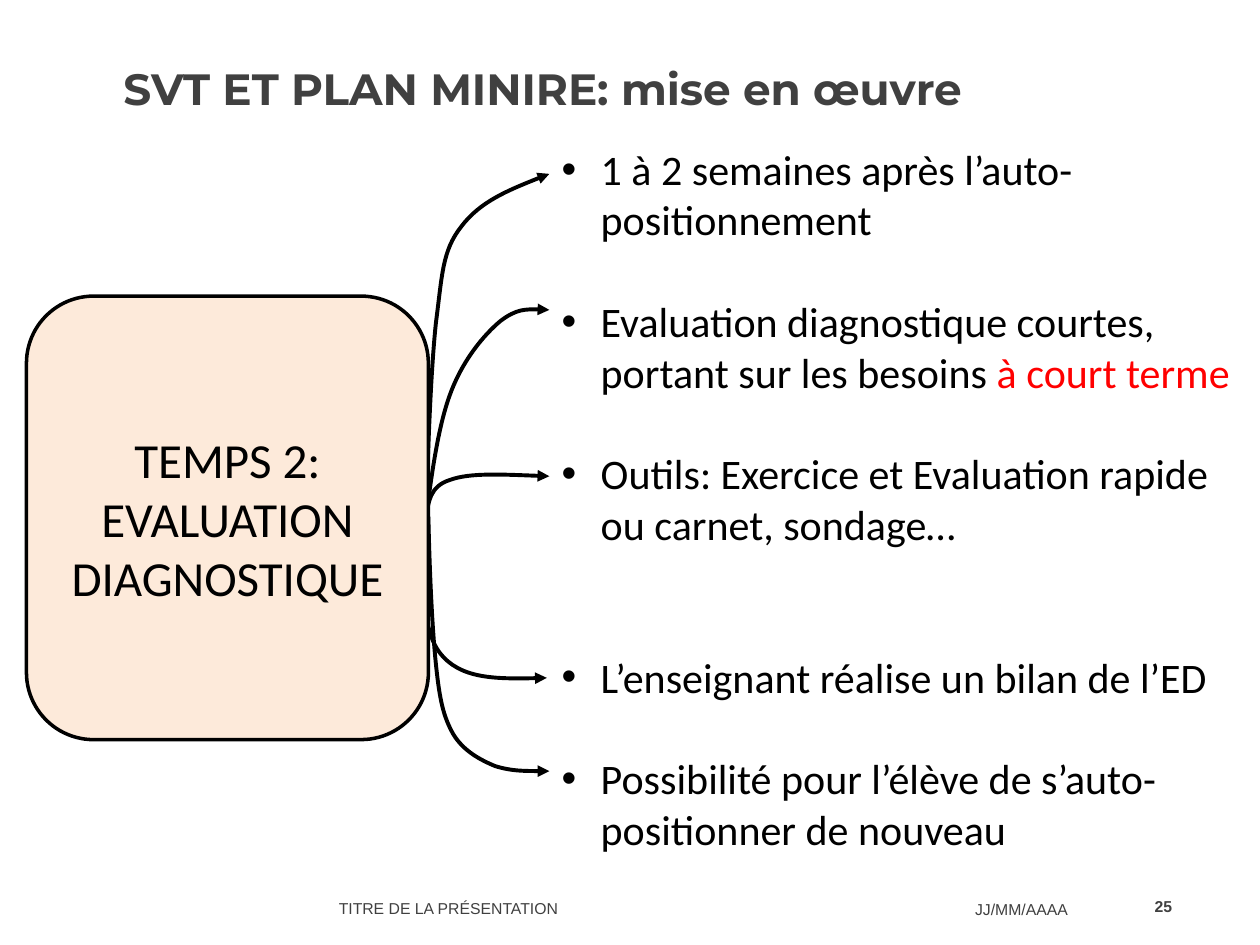
from dataclasses import dataclass

from lxml import etree
from pptx import Presentation
from pptx import util as u
from pptx.dml.color import RGBColor
from pptx.enum import shapes, text
from pptx.oxml.ns import qn

PX = 9144


@dataclass(frozen=True)
class Theme:
    ink: str = "000000"
    grey: str = "404040"
    red: str = "FF0000"
    peach: str = "FDEADA"
    head: tuple = ("Montserrat", 25)
    body: tuple = ("Calibri", 24)
    step: tuple = ("Calibri", 28)
    foot: tuple = ("Arial", 9)
    gap: float = 29.3
    wire: float = 2.25
    edge: float = 2


class Deck:
    """Draws styled elements on the current slide."""

    def __init__(self, theme, wide, high):
        self.theme = theme
        self.prs = Presentation()
        self.prs.slide_width, self.prs.slide_height = wide * PX, high * PX
        self.slide = self.prs.slides.add_slide(self.prs.slide_layouts[6])

    def style(self, para, face, color, bold=False):
        font = para.font
        font.name, font.size = face[0], u.Pt(face[1])
        font.bold = bold
        font.color.rgb = RGBColor.from_string(color)

    def frame(self, box):
        shape = self.slide.shapes.add_textbox(*(n * PX for n in box))
        shape.text_frame.word_wrap = True
        return shape.text_frame

    def label(self, words, box, face, bold=False, top=5, base=5, right=False):
        frame = self.frame(box)
        frame.vertical_anchor = text.MSO_ANCHOR.MIDDLE
        frame.margin_top, frame.margin_bottom = top * PX, base * PX
        para = frame.paragraphs[0]
        para.text = words
        para.alignment = text.PP_ALIGN.RIGHT if right else text.PP_ALIGN.LEFT
        self.style(para, face, self.theme.grey, bold)

    def bullet(self, para, indent):
        props = para._p.get_or_add_pPr()
        props.set("marL", str(indent * PX))
        props.set("indent", str(-indent * PX))
        tint = etree.SubElement(props, qn("a:buClr"))
        etree.SubElement(tint, qn("a:srgbClr"), val=self.theme.ink)
        etree.SubElement(props, qn("a:buFont"), typeface="Arial")
        etree.SubElement(props, qn("a:buChar"), char="•")

    def points(self, items, box):
        frame = self.frame(box)
        for i, (lines, words, accent) in enumerate(items):
            para = frame.add_paragraph() if i else frame.paragraphs[0]
            self.bullet(para, 31)
            if lines:
                para.space_before = u.Pt(lines * self.theme.gap)
            self.style(para, self.theme.body, self.theme.ink)
            para.add_run().text = words
            if accent:
                run = para.add_run()
                run.text = accent
                run.font.color.rgb = RGBColor.from_string(self.theme.red)

    def curve(self, start, *knots):
        pen = self.slide.shapes.build_freeform(*start, scale=PX)
        pen.add_line_segments(knots, close=False)
        shape = pen.convert_to_shape()
        legs = list(shape._element.iter(qn("a:lnTo")))
        for i in range(0, len(legs), 3):
            bend = etree.SubElement(legs[i].getparent(), qn("a:cubicBezTo"))
            for leg in legs[i:i + 3]:
                bend.append(leg[0])
                leg.getparent().remove(leg)
        shape.shadow.inherit = False
        shape.fill.background()
        self.stroke(shape, self.theme.wire)
        line = shape.line._get_or_add_ln()
        etree.SubElement(line, qn("a:tailEnd"), type="triangle")

    def stroke(self, shape, width):
        shape.line.color.rgb = RGBColor.from_string(self.theme.ink)
        shape.line.width = u.Pt(width)

    def card(self, words, box):
        kind = shapes.MSO_SHAPE.ROUNDED_RECTANGLE
        shape = self.slide.shapes.add_shape(kind, *(n * PX for n in box))
        shape.adjustments[0] = 0.167
        shape.shadow.inherit = False
        shape.fill.solid()
        shape.fill.fore_color.rgb = RGBColor.from_string(self.theme.peach)
        self.stroke(shape, self.theme.edge)
        frame = shape.text_frame
        frame.word_wrap = True
        frame.vertical_anchor = text.MSO_ANCHOR.MIDDLE
        para = frame.paragraphs[0]
        para.text = words
        para.alignment = text.PP_ALIGN.CENTER
        self.style(para, self.theme.step, self.theme.ink)


POINTS = [
    (0, "1 à 2 semaines après l’auto-positionnement", ""),
    (1, "Evaluation diagnostique courtes, portant sur les besoins ",
     "à court terme"),
    (1, "Outils: Exercice et Evaluation rapide ou carnet, sondage…", ""),
    (2, "L’enseignant réalise un bilan de l’ED", ""),
    (1, "Possibilité pour l’élève de s’auto-positionner de nouveau", ""),
]

CURVES = [
    [(338, 409), (340, 351), (342, 294), (346, 256), (351, 218), (351, 199),
     (366, 180), (381, 160), (408, 149), (436, 138)],
    [(338, 411), (343, 374), (348, 337), (358, 311), (368, 285), (384, 266),
     (397, 255), (410, 245), (423, 245), (436, 246)],
    [(338, 411), (340, 399), (341, 386), (357, 381), (373, 375), (405, 377),
     (436, 378)],
    [(339, 410), (336, 454), (333, 497), (349, 518), (365, 539), (399, 539),
     (434, 538)],
    [(340, 410), (341, 454), (343, 498), (346, 527), (349, 556), (352, 569),
     (360, 583), (368, 596), (381, 603), (393, 608), (406, 612), (421, 612),
     (436, 612)],
]


def main():
    theme = Theme()
    deck = Deck(theme, 1000, 750)
    deck.label("TITRE DE LA PRÉSENTATION", (259, 672, 388, 74), theme.foot,
               top=28)
    deck.label("JJ/MM/AAAA", (764, 699, 127, 40), theme.foot, top=10)
    deck.label("SVT ET PLAN MINIRE: mise en œuvre", (88, 20, 862, 141),
               theme.head, bold=True, base=47)
    deck.label("25", (891, 699, 49, 40), theme.foot, bold=True, right=True)
    deck.points(POINTS, (436, 109, 560, 570))
    for knots in CURVES:
        deck.curve(*knots)
    deck.card("TEMPS 2: EVALUATION DIAGNOSTIQUE", (21, 235, 319, 352))
    deck.prs.save("out.pptx")


if __name__ == "__main__":
    main()
